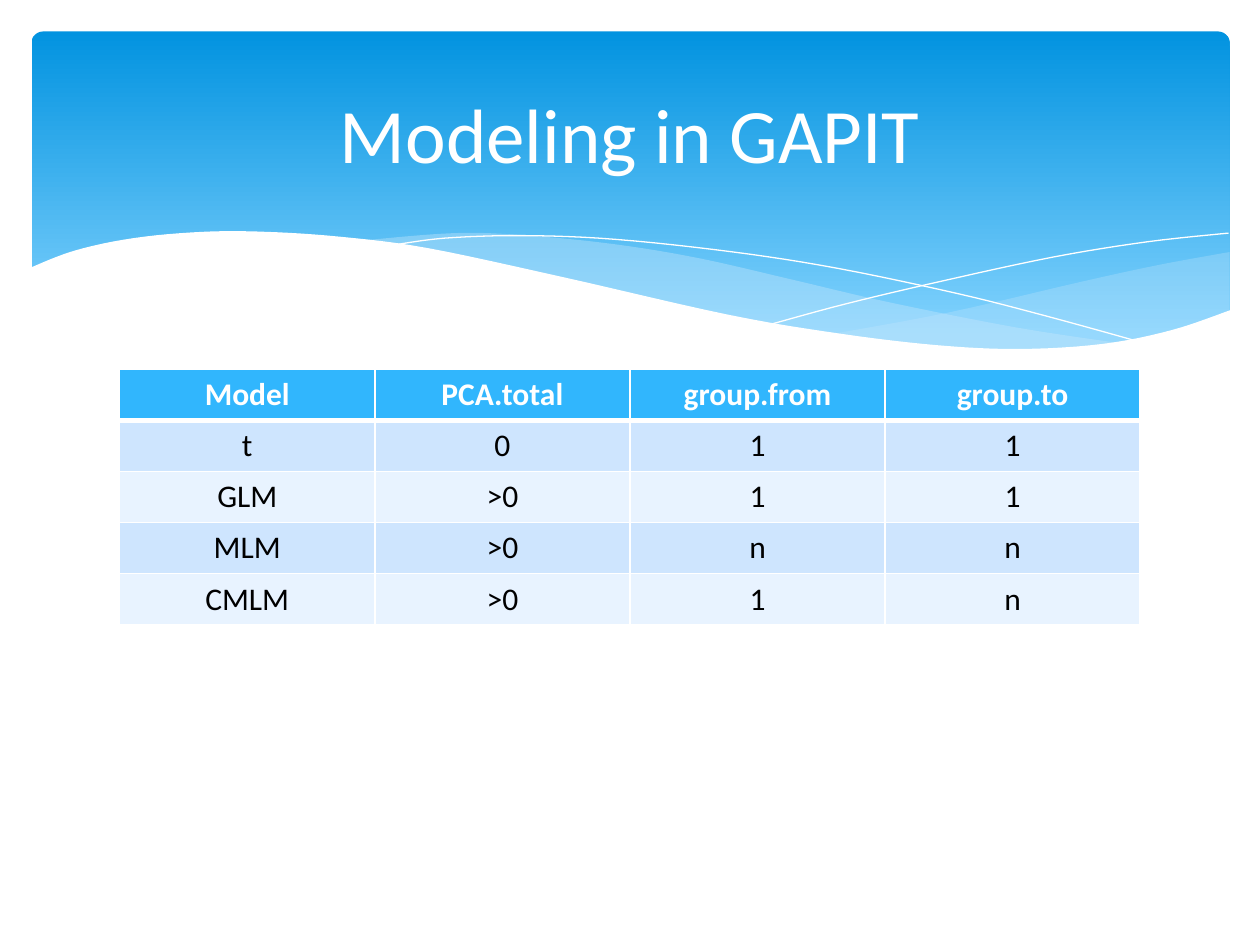
from lxml import etree
from pptx import Presentation
from pptx.dml.color import RGBColor
from pptx.enum.shapes import MSO_SHAPE
from pptx.enum.text import MSO_ANCHOR, PP_ALIGN
from pptx.oxml.ns import qn
from pptx.util import Inches, Pt

ROUND = MSO_SHAPE.ROUNDED_RECTANGLE
CENTER = PP_ALIGN.CENTER
MIDDLE = MSO_ANCHOR.MIDDLE

WHITE = RGBColor(0xFF, 0xFF, 0xFF)
BLACK = RGBColor(0x00, 0x00, 0x00)
DEEP = RGBColor(0x02, 0x93, 0xE0)
SKY = RGBColor(0x83, 0xD3, 0xFE)
MIST = RGBColor(0xC6, 0xE7, 0xFC)
HEAD = RGBColor(0x31, 0xB6, 0xFD)
BANDS = [RGBColor(0xCE, 0xE5, 0xFE), RGBColor(0xE8, 0xF3, 0xFF)]

RIGHT_TOP = [(9.76, 2), (9.21, 2.1), (8.61, 2.23), (7.53, 2.48), (6.61, 2.65)]
RIGHT_BASE = [(6.61, 2.65), (7.32, 2.74), (8.03, 2.78), (8.63, 2.75),
              (9.21, 2.65), (9.76, 2.47)]
MID_TOP = [(8.93, 2.73), (8.07, 2.6), (7.06, 2.4), (6.29, 2.22), (5.55, 2.05),
           (4.89, 1.94), (4.2, 1.87), (3.61, 1.85), (2.86, 1.91)]
MID_BASE = [(2.86, 1.91), (3.62, 2.03), (4.49, 2.22), (5.3, 2.4), (6.18, 2.58),
            (6.95, 2.7), (7.61, 2.77), (8.28, 2.78), (8.93, 2.73)]
FALL = [(3.09, 1.95), (3.53, 1.89), (4.16, 1.87), (4.89, 1.9), (5.82, 2),
        (6.65, 2.13), (7.6, 2.33), (8.31, 2.51), (9.07, 2.72)]
RISE = [(6.13, 2.57), (6.72, 2.41), (7.48, 2.23), (8.36, 2.04), (9.1, 1.92),
        (9.75, 1.85)]
CREST = [(9.77, 2.46), (9.3, 2.62), (8.75, 2.73), (8.09, 2.77), (7.44, 2.74),
         (6.68, 2.65), (5.79, 2.5), (4.47, 2.2), (3.4, 1.97), (2.71, 1.88),
         (2.11, 1.84), (1.61, 1.84), (1.06, 1.89), (0.59, 1.99), (0.23, 2.13)]
FLOOR = [(0.23, 3.29), (9.77, 3.29)]

ROWS = [
    ["Model", "PCA.total", "group.from", "group.to"],
    ["t", "0", "1", "1"],
    ["GLM", ">0", "1", "1"],
    ["MLM", ">0", "n", "n"],
    ["CMLM", ">0", "1", "n"],
]


def curve(knots, steps=6):
    ends = [knots[0], *knots, knots[-1]]
    points = [knots[0]]
    for a, b, c, d in zip(ends, ends[1:], ends[2:], ends[3:]):
        for step in range(1, steps + 1):
            t = step / steps
            points.append(tuple(
                q + t / 2 * (r - p + t * (2 * p - 5 * q + 4 * r - s
                                          + t * (3 * q - p - 3 * r + s)))
                for p, q, r, s in zip(a, b, c, d)))
    return points


def write(frame, text, size=18, color=BLACK, bold=False, font="Calibri"):
    para = frame.paragraphs[0]
    para.alignment = CENTER
    run = para.add_run()
    run.text = text
    run.font.size = Pt(size)
    run.font.name = font
    run.font.bold = bold
    run.font.color.rgb = color


def edge(cell, widths):
    props = cell._tc.get_or_add_tcPr()
    for spot, (side, width) in enumerate(widths.items()):
        line = etree.Element(qn("a:" + side), w=str(Pt(width)))
        fill = etree.SubElement(line, qn("a:solidFill"))
        etree.SubElement(fill, qn("a:srgbClr"), val=str(WHITE))
        props.insert(spot, line)


class Deck:
    def __init__(self):
        self.show = Presentation()
        self.show.slide_width = Inches(10)
        self.show.slide_height = Inches(7.5)
        self.slide = self.show.slides.add_slide(self.show.slide_layouts[6])

    def banner(self, *box):
        shape = self.slide.shapes.add_shape(ROUND, *map(Inches, box))
        shape.shadow.inherit = False
        shape.adjustments[0] = 0.034
        shape.line.fill.background()
        shape.fill.gradient()
        shape.fill.gradient_angle = 270
        stops = shape.fill.gradient_stops
        for stop, place, color in zip(stops, (0, 0.9), (DEEP, SKY)):
            stop.position = place
            stop.color.rgb = color

    def trace(self, points, close):
        spots = [(Inches(x), Inches(y)) for x, y in points]
        pen = self.slide.shapes.build_freeform(*spots[0])
        pen.add_line_segments(spots[1:], close=close)
        shape = pen.convert_to_shape()
        shape.shadow.inherit = False
        return shape

    def wave(self, points, color, alpha=100):
        shape = self.trace(points, True)
        shape.line.fill.background()
        shape.fill.solid()
        shape.fill.fore_color.rgb = color
        if alpha < 100:
            tone = shape.element.spPr.find(".//" + qn("a:srgbClr"))
            etree.SubElement(tone, qn("a:alpha"), val=str(alpha * 1000))

    def thread(self, points):
        shape = self.trace(points, False)
        shape.fill.background()
        shape.line.color.rgb = WHITE
        shape.line.width = Pt(0)

    def title(self, text, *box):
        frame = self.slide.shapes.add_textbox(*map(Inches, box)).text_frame
        frame.word_wrap = True
        frame.vertical_anchor = MIDDLE
        write(frame, text, size=44, color=WHITE)

    def table(self, rows, *box):
        grid = self.slide.shapes.add_table(
            len(rows), len(rows[0]), *map(Inches, box)).table
        for i, row in enumerate(rows):
            top = i == 0
            for j, text in enumerate(row):
                cell = grid.cell(i, j)
                cell.fill.solid()
                cell.fill.fore_color.rgb = HEAD if top else BANDS[(i - 1) % 2]
                edge(cell, {"lnL": 1, "lnR": 1, "lnT": 3 if i == 1 else 1,
                            "lnB": 3 if top else 1})
                write(cell.text_frame, text, bold=top,
                      color=WHITE if top else BLACK)


def main():
    deck = Deck()
    deck.banner(0.25, 0.25, 9.51, 2.7)
    deck.wave(curve(RIGHT_TOP) + curve(RIGHT_BASE), MIST, 29)
    deck.wave(curve(MID_TOP) + curve(MID_BASE), MIST, 40)
    deck.thread(curve(FALL))
    deck.thread(curve(RISE))
    deck.wave(curve(CREST) + FLOOR, WHITE)
    deck.table(ROWS, 0.95, 2.93, 8.1, 2.03)
    deck.title("Modeling in GAPIT", 0.5, 0.37, 9, 1.37)
    deck.show.save("out.pptx")


if __name__ == "__main__":
    main()
